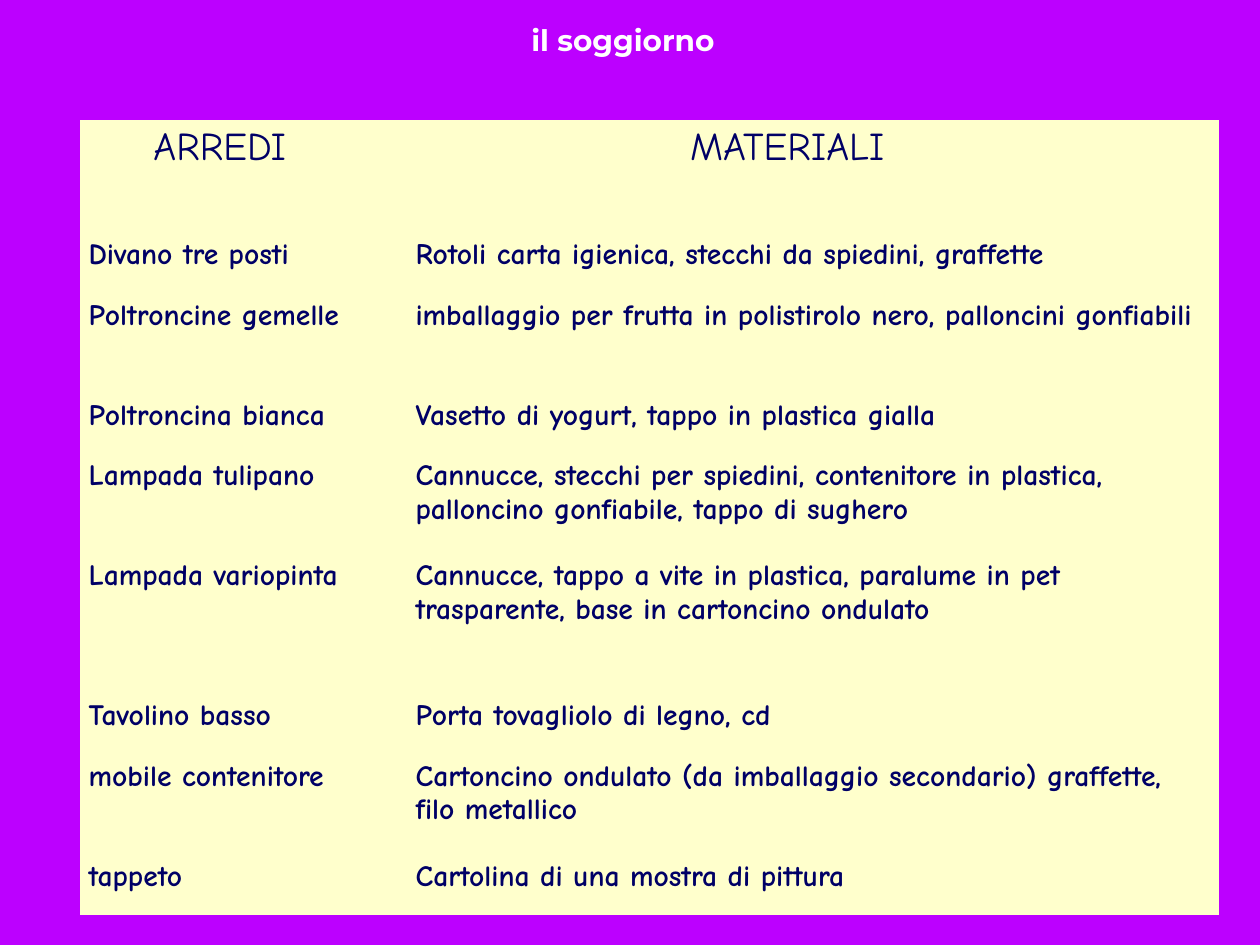
"""Build the slide listing the living room furniture and its materials."""
from dataclasses import dataclass

from pptx import Presentation
from pptx import util as u
from pptx.dml import color
from pptx.enum import text

WIDTH, HEIGHT = u.Inches(14.22), u.Inches(10.67)
NO_GRID_STYLE = "{2D5ABB26-0587-4C30-8999-92F81FD0307C}"


@dataclass(frozen=True)
class Theme:
    background: str = "BC00FF"
    cell: str = "FFFFCC"
    ink: str = "000066"
    title_ink: str = "FFFFFF"
    body_font: str = "Comic Neue"
    title_font: str = "Montserrat"
    header_size: int = 32
    body_size: int = 24


@dataclass(frozen=True)
class Furnishing:
    name: str
    materials: str
    lines: int = 1


THEME = Theme()
HEADERS = ("ARREDI", "MATERIALI")
HEADER_INDENTS = (5.85, 22.5)
COLUMNS = (25.95, 64.49)
HEADER_ROW, LINE_ROW, ROW_PADDING = 12, 4.22, 2.16
FURNISHINGS = (
    Furnishing("Divano tre posti", "Rotoli carta igienica, stecchi da spiedini, graffette"),
    Furnishing("Poltroncine gemelle",
               "imballaggio per frutta in polistirolo nero, palloncini gonfiabili", 2),
    Furnishing("Poltroncina bianca", "Vasetto di yogurt, tappo in plastica gialla"),
    Furnishing("Lampada tulipano",
               "Cannucce, stecchi per spiedini, contenitore in plastica, "
               "palloncino gonfiabile, tappo di sughero", 2),
    Furnishing("Lampada variopinta",
               "Cannucce, tappo a vite in plastica, paralume in pet trasparente, "
               "base in cartoncino ondulato", 3),
    Furnishing("Tavolino basso", "Porta tovagliolo di legno, cd"),
    Furnishing("mobile contenitore",
               "Cartoncino ondulato (da imballaggio secondario) graffette, filo metallico", 2),
    Furnishing("tappeto", "Cartolina di una mostra di pittura"),
)


def across(percent: float) -> int:
    return round(WIDTH * percent / 100)


def down(percent: float) -> int:
    return round(HEIGHT * percent / 100)


def add_run(p, words: str, font: str, size: int, ink: str, bold: bool) -> None:
    r = p.add_run()
    r.text = words
    r.font.name, r.font.size, r.font.bold = font, u.Pt(size), bold
    r.font.color.rgb = color.RGBColor.from_string(ink)


def set_title(s, words: str) -> None:
    sp = s.shapes.title
    sp.left, sp.top = across(5.77), down(1.87)
    sp.width, sp.height = across(87.34), down(7.4)
    tf = sp.text_frame
    tf.word_wrap = False
    tf.auto_size = text.MSO_AUTO_SIZE.NONE
    tf.vertical_anchor = text.MSO_ANCHOR.TOP
    p = tf.paragraphs[0]
    p.alignment = text.PP_ALIGN.CENTER
    add_run(p, words, THEME.title_font, THEME.body_size, THEME.title_ink, True)


def fill_cell(cell, words: str, size: int, bold: bool) -> None:
    cell.fill.solid()
    cell.fill.fore_color.rgb = color.RGBColor.from_string(THEME.cell)
    add_run(cell.text_frame.paragraphs[0], words, THEME.body_font, size, THEME.ink, bold)


def add_furnishings(s) -> None:
    heights = [HEADER_ROW] + [ROW_PADDING + LINE_ROW * f.lines for f in FURNISHINGS]
    table = s.shapes.add_table(len(heights), len(COLUMNS), across(6.33), down(12.75),
                               across(sum(COLUMNS)), down(sum(heights))).table
    table.first_row = table.horz_banding = False
    table._tbl.tblPr[0].text = NO_GRID_STYLE
    for column, width in zip(table.columns, COLUMNS):
        column.width = across(width)
    for row, height in zip(table.rows, heights):
        row.height = down(height)
    for i, (words, indent) in enumerate(zip(HEADERS, HEADER_INDENTS)):
        fill_cell(table.cell(0, i), words, THEME.header_size, False)
        table.cell(0, i).margin_left = across(indent)
    for i, f in enumerate(FURNISHINGS, 1):
        for j, words in enumerate((f.name, f.materials)):
            fill_cell(table.cell(i, j), words, THEME.body_size, True)


def main() -> None:
    prs = Presentation()
    prs.slide_width, prs.slide_height = WIDTH, HEIGHT
    s = prs.slides.add_slide(prs.slide_layouts[5])
    s.background.fill.solid()
    s.background.fill.fore_color.rgb = color.RGBColor.from_string(THEME.background)
    add_furnishings(s)
    set_title(s, "il soggiorno")
    prs.save("out.pptx")


if __name__ == "__main__":
    main()
